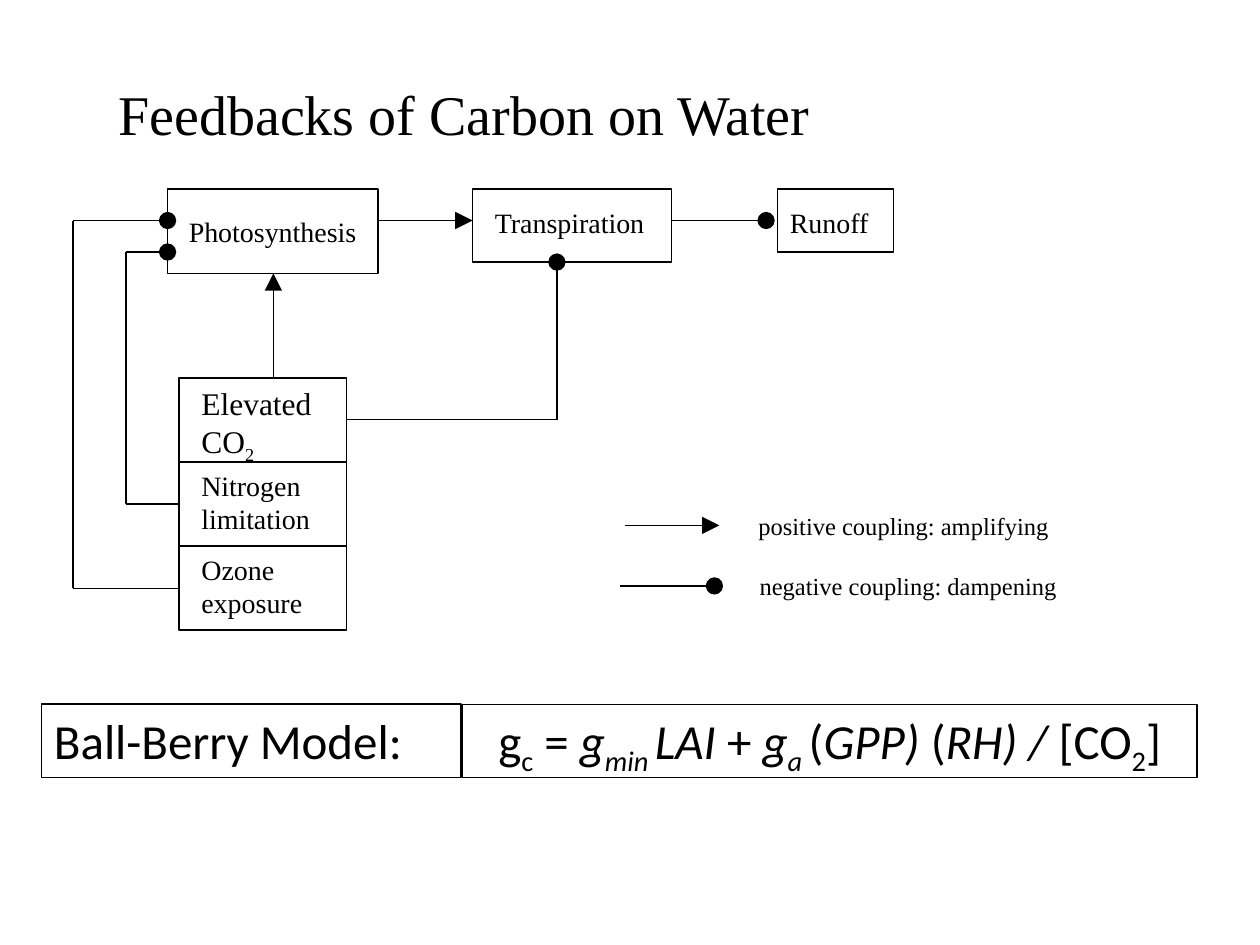
from itertools import pairwise

from lxml import etree
from pptx import Presentation
from pptx.dml.color import RGBColor
from pptx.enum.shapes import MSO_CONNECTOR, MSO_SHAPE
from pptx.enum.text import MSO_ANCHOR, MSO_AUTO_SIZE, PP_ALIGN
from pptx.oxml.ns import qn
from pptx.util import Inches, Pt

STRAIGHT = MSO_CONNECTOR.STRAIGHT
RECTANGLE = MSO_SHAPE.RECTANGLE
TOP = MSO_ANCHOR.TOP
NO_FIT = MSO_AUTO_SIZE.NONE
LEFT, CENTER = PP_ALIGN.LEFT, PP_ALIGN.CENTER

COLORS = {"ink": "000000", "paper": "FFFFFF"}
SERIF, SANS = "Times New Roman", "Calibri"
POSITIVE, NEGATIVE = "triangle", "oval"
SUB = {"sub": True}
ITALIC = {"italic": True}
ITALIC_SUB = ITALIC | SUB


def ink():
    return RGBColor.from_string(COLORS["ink"])


class Diagram:
    """Holds the slide and its black-on-white line style."""

    def __init__(self, slide):
        self.slide = slide
        slide.background.fill.solid()
        slide.background.fill.fore_color.rgb = RGBColor.from_string(COLORS["paper"])

    def fill_text(self, frame, lines, size, font=SERIF, align=LEFT, wrap=False):
        """Fill a frame; each line is a string or a list of (text, format) runs."""
        frame_format = {"word_wrap": wrap, "auto_size": NO_FIT, "vertical_anchor": TOP}
        for name, value in frame_format.items():
            setattr(frame, name, value)
        for index, line in enumerate(lines):
            paragraph = frame.add_paragraph() if index else frame.paragraphs[0]
            paragraph.alignment = align
            runs = [(line, {})] if isinstance(line, str) else line
            for text, style in runs:
                run = paragraph.add_run()
                run.text = text
                run_format = {"name": font, "size": Pt(size),
                              "italic": style.get("italic", False)}
                for name, value in run_format.items():
                    setattr(run.font, name, value)
                run.font.color.rgb = ink()
                if style.get("sub"):
                    run.font._element.set("baseline", "-25000")

    def title(self, text, place, size):
        heading = self.slide.shapes.title
        for name, value in zip(("left", "top", "width", "height"), place):
            setattr(heading, name, Inches(value))
        self.fill_text(heading.text_frame, [text], size)

    def label(self, lines, place, size):
        text_box = self.slide.shapes.add_textbox(*map(Inches, place))
        self.fill_text(text_box.text_frame, lines, size)

    def box(self, place, weight=0.75):
        outline = self.slide.shapes.add_shape(RECTANGLE, *map(Inches, place))
        outline.shadow.inherit = False
        outline.fill.background()
        outline.line.color.rgb = ink()
        outline.line.width = Pt(weight)
        return outline

    def formula_box(self, runs, place, align=LEFT, weight=0.75):
        frame = self.box(place, weight).text_frame
        self.fill_text(frame, [runs], 28, SANS, align, wrap=True)

    def coupling(self, points, end):
        """Join the points with straight lines and mark the last one's end."""
        for start, stop in pairwise(points):
            link = self.slide.shapes.add_connector(
                STRAIGHT, *map(Inches, (*start, *stop)))
            link.line.color.rgb = ink()
            link.line.width = Pt(0.75)
            properties = link._element.spPr
            if stop == points[-1]:
                etree.SubElement(properties.find(qn("a:ln")), qn("a:tailEnd"),
                                 type=end, w="lg", len="lg")
            etree.SubElement(properties, qn("a:effectLst"))


def main():
    deck = Presentation()
    deck.slide_width, deck.slide_height = Inches(10), Inches(7.5)
    diagram = Diagram(deck.slides.add_slide(deck.slide_layouts[5]))
    diagram.title("Feedbacks of Carbon on Water", (0.84, 0.58, 5.74, 0.64), 32)

    processes = [
        ("Photosynthesis", (1.4, 1.65, 1.54, 0.37), (1.33, 1.5, 1.67, 0.67)),
        ("Transpiration", (3.83, 1.58, 1.4, 0.37), (3.75, 1.5, 1.58, 0.58)),
        ("Runoff", (6.17, 1.58, 0.83, 0.37), (6.17, 1.5, 0.92, 0.5)),
    ]
    for name, label_place, box_place in processes:
        diagram.label([name], label_place, 16)
        diagram.box(box_place)

    drivers = [
        (["Elevated", [("CO", {}), ("2", SUB)]], 1.08, 0.7, 18),
        (["Nitrogen", "limitation"], 1.07, 0.64, 16),
        (["Ozone", "exposure"], 1.01, 0.64, 16),
    ]
    driver_height = 2 / 3
    for row, (lines, width, height, size) in enumerate(drivers):
        top = 3 + row * driver_height
        diagram.label(lines, (1.5, top, width, height), size)
        diagram.box((1.42, top, 1.33, driver_height))

    couplings = [
        ([(3, 1.75), (3.75, 1.75)], POSITIVE),
        ([(2.17, 3), (2.17, 2.17)], POSITIVE),
        ([(2.75, 3.33), (4.42, 3.33), (4.42, 2.08)], NEGATIVE),
        ([(1.42, 4.67), (0.58, 4.67), (0.58, 1.75), (1.33, 1.75)], NEGATIVE),
        ([(1.42, 4), (1, 4), (1, 2), (1.33, 2)], NEGATIVE),
        ([(5.33, 1.75), (6.08, 1.75)], NEGATIVE),
        ([(4.96, 4.17), (5.71, 4.17)], POSITIVE),
        ([(4.92, 4.65), (5.67, 4.65)], NEGATIVE),
    ]
    for points, end in couplings:
        diagram.coupling(points, end)

    diagram.label(["positive coupling: amplifying"], (5.92, 4.01, 2.52, 0.34), 14)
    diagram.label(["negative coupling: dampening"], (5.93, 4.48, 2.58, 0.34), 14)

    conductance = [
        ("g", {}), ("c", SUB), (" = ", {}), ("g", ITALIC), ("min ", ITALIC_SUB),
        ("LAI ", ITALIC), ("+ ", {}), ("g", ITALIC), ("a ", ITALIC_SUB),
        ("(", {}), ("GPP)", ITALIC), (" (", {}), ("RH) / ", ITALIC),
        ("[CO", {}), ("2", SUB), ("]", {}),
    ]
    diagram.formula_box(conductance, (3.67, 5.59, 5.83, 0.58), CENTER)
    diagram.formula_box("Ball-Berry Model:", (0.33, 5.59, 3.33, 0.58), weight=1)
    deck.save("out.pptx")


if __name__ == "__main__":
    main()
